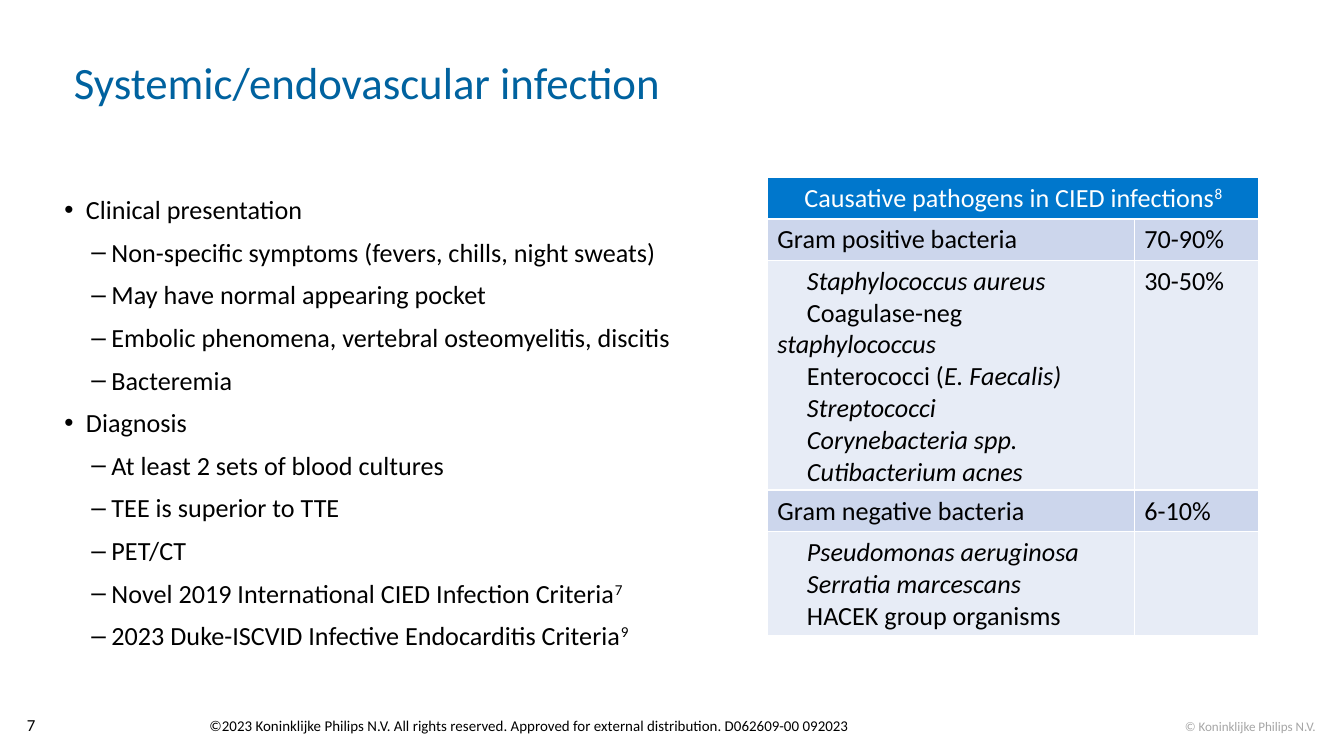
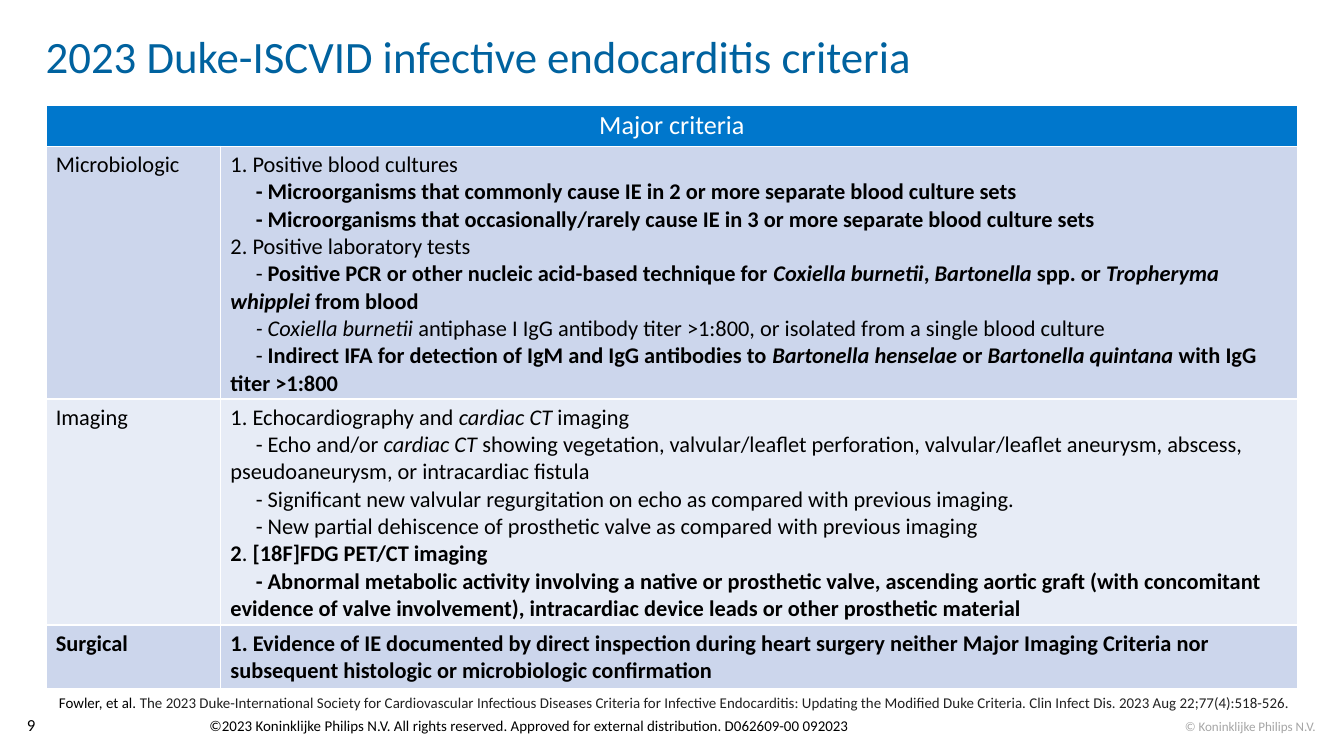
from dataclasses import dataclass

import lxml.etree
import pptx
import pptx.dml.color
import pptx.enum.text
import pptx.oxml.ns
import pptx.util
from pptx.util import Inches

FONT = "Calibri"
BLACK, WHITE, GREY, DARK_GREY = "000000", "FFFFFF", "A6A6A6", "212121"
TITLE_BLUE, HEADER_BLUE = "00629F", "0077CC"
BANDS = ("CCD6EC", "E7ECF6")
LEFT = pptx.enum.text.PP_ALIGN.LEFT
CENTER = pptx.enum.text.PP_ALIGN.CENTER
RIGHT = pptx.enum.text.PP_ALIGN.RIGHT
TOP = pptx.enum.text.MSO_ANCHOR.TOP
BOTTOM = pptx.enum.text.MSO_ANCHOR.BOTTOM
INDENT_EM = 1.13  # first-line indent of table sub-items


@dataclass(frozen=True)
class Box:
    left: float
    top: float
    width: float
    height: float

    def inches(self) -> tuple:
        return tuple(Inches(v) for v in (self.left, self.top, self.width, self.height))


@dataclass(frozen=True)
class Style:
    size: float
    color: str = BLACK
    align: int = LEFT


@dataclass(frozen=True)
class BulletLevel:
    char: str
    margin: float
    hanging: float


@dataclass(frozen=True)
class CriteriaTable:
    box: Box
    columns: tuple
    row_heights: tuple
    header: str
    rows: tuple
    size: float


BULLETS = (BulletLevel("•", 0.16, 0.16), BulletLevel("–", 0.35, 0.15))
HEADER_STYLE = Style(14, WHITE, CENTER)

# Markup in texts: *bold*, _italic_, ^superscript^; a leading ~ indents the first line.
CLINICAL_POINTS = (
    (0, "Clinical presentation"),
    (1, "Non-specific symptoms (fevers, chills, night sweats)"),
    (1, "May have normal appearing pocket"),
    (1, "Embolic phenomena, vertebral osteomyelitis, discitis"),
    (1, "Bacteremia"),
    (0, "Diagnosis"),
    (1, "At least 2 sets of blood cultures"),
    (1, "TEE is superior to TTE"),
    (1, "PET/CT"),
    (1, "Novel 2019 International CIED Infection Criteria^7^"),
    (1, "2023 Duke-ISCVID Infective Endocarditis Criteria^9^"),
)

PATHOGENS = CriteriaTable(
    Box(5.71, 1.32, 3.66, 3.41), (2.73, 0.93), (0.3, 0.3, 1.43, 0.3, 0.75),
    "Causative pathogens in CIED infections^8^",
    (
        (("Gram positive bacteria",), ("70-90%",)),
        (("~_Staphylococcus aureus_",
          "~Coagulase-neg _staphylococcus_",
          "~Enterococci (_E. Faecalis)_",
          "~_Streptococci_",
          "~_Corynebacteria spp._",
          "~_Cutibacterium acnes_"), ("30-50%",)),
        (("Gram negative bacteria",), ("6-10%",)),
        (("~_Pseudomonas aeruginosa_",
          "~_Serratia marcescans_",
          "~HACEK group organisms"), ()),
    ),
    14,
)

MAJOR_CRITERIA = CriteriaTable(
    Box(0.34, 0.78, 9.31, 4.33), (1.3, 8.02), (0.3, 1.88, 1.68, 0.47),
    "Major criteria",
    (
        (("Microbiologic",),
         ("1. Positive blood cultures",
          "~*- Microorganisms that commonly cause IE in 2 or more separate blood culture sets*",
          "~*- Microorganisms that occasionally/rarely cause IE in 3 or more separate "
          "blood culture sets*",
          "2. Positive laboratory tests",
          "~- *Positive PCR or other nucleic acid-based technique for _Coxiella burnetii_, "
          "_Bartonella_ spp. or _Tropheryma whipplei_ from blood*",
          "~_- Coxiella burnetii _antiphase I IgG antibody titer >1:800, or isolated from "
          "a single blood culture",
          "~- *Indirect IFA for detection of IgM and IgG antibodies to _Bartonella henselae_ "
          "or _Bartonella quintana_ with IgG titer >1:800*")),
        (("Imaging",),
         ("1. Echocardiography and _cardiac CT _imaging",
          "~- Echo and/or _cardiac CT _showing vegetation, valvular/leaflet perforation, "
          "valvular/leaflet aneurysm, abscess, pseudoaneurysm, or intracardiac fistula",
          "~- Significant new valvular regurgitation on echo as compared with previous imaging.",
          "~- New partial dehiscence of prosthetic valve as compared with previous imaging",
          "*2*. *[18F]FDG PET/CT imaging*",
          "~*- Abnormal metabolic activity involving a native or prosthetic valve, ascending "
          "aortic graft (with concomitant evidence of valve involvement), intracardiac device "
          "leads or other prosthetic material*")),
        (("*Surgical*",),
         ("*1. Evidence of IE documented by direct inspection during heart surgery neither "
          "Major Imaging Criteria nor subsequent histologic or microbiologic confirmation*",)),
    ),
    12,
)


def rgb(color: str) -> pptx.dml.color.RGBColor:
    return pptx.dml.color.RGBColor.from_string(color)


def add_xml(parent, tag: str, **attributes: str):
    return lxml.etree.SubElement(parent, pptx.oxml.ns.qn(tag), attributes)


# Text
def set_font(paragraph, style: Style) -> None:
    paragraph.alignment = style.align
    paragraph.font.name = FONT
    paragraph.font.size = pptx.util.Pt(style.size)
    paragraph.font.color.rgb = rgb(style.color)


def add_runs(paragraph, text: str) -> None:
    active, piece = set(), ""
    for char in text + "\n":
        if char not in "*_^\n":
            piece += char
            continue
        if piece:
            run = paragraph.add_run()
            run.text = piece
            if "*" in active:
                run.font.bold = True
            if "_" in active:
                run.font.italic = True
            if "^" in active:
                run._r.get_or_add_rPr().set("baseline", "30000")
        active ^= {char}
        piece = ""


def paragraphs_for(frame, count: int) -> list:
    for _ in range(count - 1):
        frame.add_paragraph()
    return list(frame.paragraphs)


def set_indent(paragraph, margin: int, first_line: int):
    properties = paragraph._p.get_or_add_pPr()
    properties.set("marL", str(margin))
    properties.set("indent", str(first_line))
    return properties


def clear_insets(frame) -> None:
    frame.margin_left = frame.margin_right = frame.margin_top = frame.margin_bottom = 0


def add_text(slide, box: Box, text: str, style: Style, inset: bool = False, anchor=TOP):
    frame = slide.shapes.add_textbox(*box.inches()).text_frame
    frame.word_wrap = True
    frame.vertical_anchor = anchor
    if not inset:
        clear_insets(frame)
    if text:
        add_runs(frame.paragraphs[0], text)
        set_font(frame.paragraphs[0], style)
    return frame


def add_bullets(slide, box: Box, points: tuple, style: Style) -> None:
    frame = add_text(slide, box, "", style)
    for paragraph, (level, text) in zip(paragraphs_for(frame, len(points)), points):
        bullet = BULLETS[level]
        paragraph.level = level
        paragraph.space_after = pptx.util.Pt(6)
        properties = set_indent(paragraph, Inches(bullet.margin), -Inches(bullet.hanging))
        add_xml(add_xml(properties, "a:buClr"), "a:srgbClr", val=style.color)
        add_xml(properties, "a:buFont", typeface="Arial")
        add_xml(properties, "a:buChar", char=bullet.char)
        add_runs(paragraph, text)
        set_font(paragraph, style)


# Tables: the default table style supplies the white rules
def fill_cell(cell, lines: tuple, style: Style, fill: str) -> None:
    cell.margin_left = cell.margin_right = pptx.util.Pt(5.4)
    cell.margin_top = cell.margin_bottom = pptx.util.Pt(2.7)
    for paragraph, line in zip(paragraphs_for(cell.text_frame, len(lines)), lines):
        if line.startswith("~"):
            set_indent(paragraph, 0, pptx.util.Pt(style.size * INDENT_EM))
        add_runs(paragraph, line.lstrip("~"))
        set_font(paragraph, style)
    cell.fill.solid()
    cell.fill.fore_color.rgb = rgb(fill)


def add_criteria_table(slide, content: CriteriaTable) -> None:
    frame = slide.shapes.add_table(
        len(content.row_heights), len(content.columns), *content.box.inches())
    table = frame.table
    for column, width in zip(table.columns, content.columns):
        column.width = Inches(width)
    for row, height in zip(table.rows, content.row_heights):
        row.height = Inches(height)
    frame.width, frame.height = Inches(content.box.width), Inches(content.box.height)
    header = table.cell(0, 0)
    header.merge(table.cell(0, len(content.columns) - 1))
    fill_cell(header, (content.header,), HEADER_STYLE, HEADER_BLUE)
    for run in header.text_frame.paragraphs[0].runs:
        run.font.bold = False
    for r, row in enumerate(content.rows):
        for c, lines in enumerate(row):
            fill_cell(table.cell(r + 1, c), lines, Style(content.size), BANDS[r % 2])


# Slide frame: title, copyright lines and page number
def add_slide(deck, title: str, title_box: Box, page: int):
    slide = deck.slides.add_slide(deck.slide_layouts[5])
    heading = slide.shapes.title
    heading.left, heading.top, heading.width, heading.height = title_box.inches()
    frame = heading.text_frame
    frame.auto_size = pptx.enum.text.MSO_AUTO_SIZE.NONE
    frame.word_wrap = True
    frame.vertical_anchor = TOP
    clear_insets(frame)
    add_runs(frame.paragraphs[0], title)
    set_font(frame.paragraphs[0], Style(24, TITLE_BLUE))
    add_text(slide, Box(8.62, 5.16, 1.17, 0.3), "© Koninklijke Philips N.V.",
             Style(7, GREY, RIGHT), anchor=BOTTOM)
    add_text(slide, Box(1.46, 5.28, 5, 0.24),
             "©2023 Koninklijke Philips N.V. All rights reserved. "
             "Approved for external distribution. D062609-00 092023", Style(8), inset=True)
    add_text(slide, Box(0.2, 5.32, 0.22, 0.16), str(page), Style(9))
    return slide


def main() -> None:
    deck = pptx.Presentation()
    deck.slide_width = Inches(10)
    deck.slide_height = deck.slide_width * 9 // 16

    # Systemic infection
    infection = add_slide(deck, "Systemic/endovascular infection",
                          Box(0.55, 0.41, 8.23, 0.79), 7)
    add_bullets(infection, Box(0.48, 1.44, 4.84, 3.78), CLINICAL_POINTS, Style(14))
    add_criteria_table(infection, PATHOGENS)

    # Duke-ISCVID criteria
    criteria = add_slide(deck, "2023 Duke-ISCVID infective endocarditis criteria",
                         Box(0.34, 0.21, 9.31, 1.09), 9)
    add_criteria_table(criteria, MAJOR_CRITERIA)
    citation = add_text(criteria, Box(0.34, 5.11, 9.66, 0.24), "Fowler, et al. ",
                        Style(8), inset=True).paragraphs[0]
    add_runs(citation,
             "The 2023 Duke-International Society for Cardiovascular Infectious Diseases "
             "Criteria for Infective Endocarditis: Updating the Modified Duke Criteria. "
             "Clin Infect Dis. 2023 Aug 22;77(4):518-526.")
    citation.runs[-1].font.color.rgb = rgb(DARK_GREY)

    deck.save("out.pptx")


if __name__ == "__main__":
    main()
